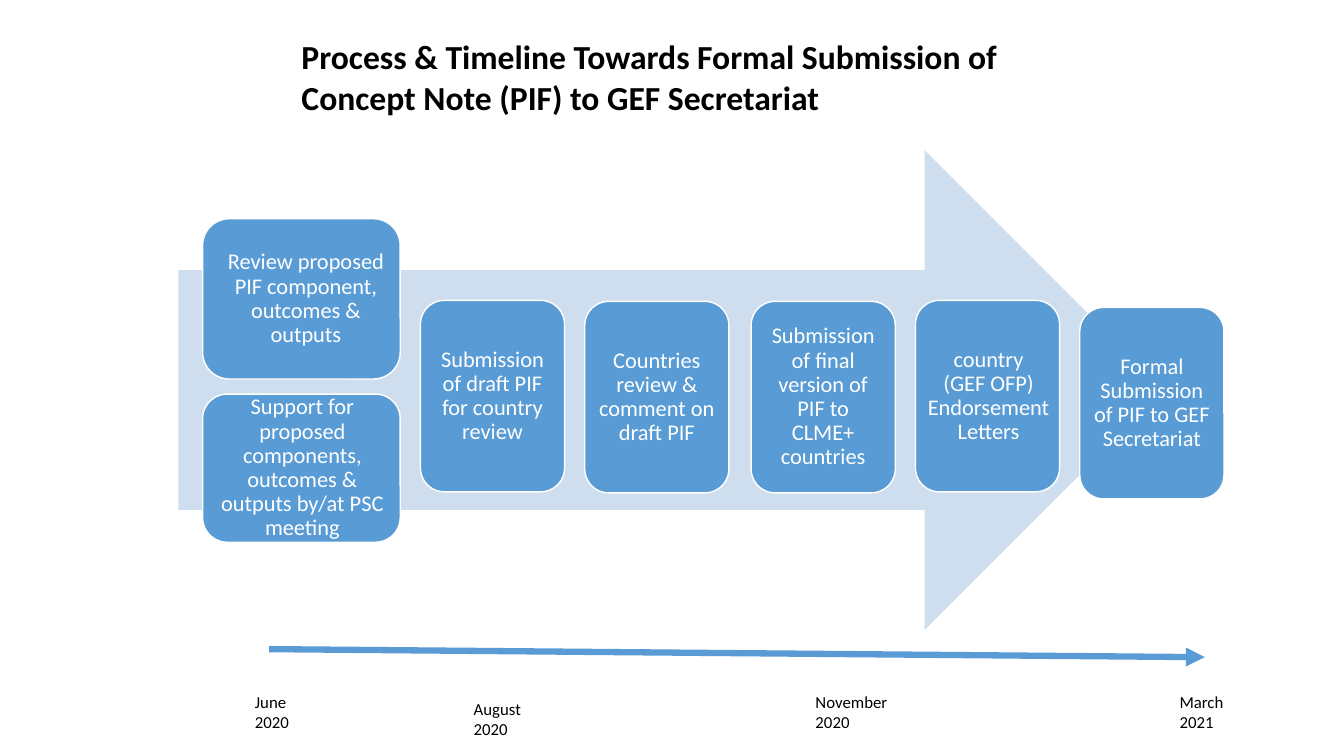
"""Build the slide on the process and timeline towards submitting the concept note."""
from lxml import etree
from pptx import Presentation
from pptx import util as u
from pptx.dml.color import RGBColor
from pptx.enum import shapes, text
from pptx.oxml import ns

PX = 9144
FONT = "Calibri"
COLORS = {"arrow": "CFDEEF", "step": "599BD5", "timeline": "5B9BD5",
          "white": "FFFFFF", "black": "000000"}

TITLE = "Process & Timeline Towards Formal Submission of Concept Note (PIF) to GEF Secretariat"
TITLE_BOX = (289, 31, 818, 91)
ARROW_BOX = (177, 149, 978, 476)
TIMELINE = (267, 644, 1195, 652)
STEP_SIZE = (143, 190)
EVEN = (7, 7)

REVIEWS = [
    ("Review proposed PIF component, outcomes & outputs", (201, 217, 196, 159), (14, 5)),
    ("Support for proposed components, outcomes & outputs by/at PSC meeting",
     (201, 391, 196, 147), (2, 0)),
]
STEPS = [
    ("Submission of draft PIF for country review", (417, 298), EVEN),
    ("Countries review & comment on draft PIF", (580, 299), EVEN),
    ("Submission of final version of PIF to CLME+ countries", (745, 299), EVEN),
    ("country\n(GEF OFP) Endorsement Letters", (908, 298), (2, 0)),
    ("Formal Submission of PIF to GEF Secretariat", (1071, 305), EVEN),
]
DATES = [
    ("June\n2020", (243, 681, 91, 50)),
    ("August 2020", (460, 688, 80, 50)),
    ("November 2020", (799, 681, 103, 50)),
    ("March\n2021", (1160, 681, 88, 50)),
]


def emu(lengths):
    return [u.Emu(length * PX) for length in lengths]


def color(name):
    return RGBColor.from_string(COLORS[name])


def write(shape, words, size, ink, margins, anchor, align, spacing=1.0, bold=False):
    frame = shape.text_frame
    frame.text = words
    left, right, vertical = emu(margins)
    frame_format = {"word_wrap": True, "auto_size": text.MSO_AUTO_SIZE.NONE,
                    "vertical_anchor": anchor, "margin_left": left, "margin_right": right,
                    "margin_top": vertical, "margin_bottom": vertical}
    for name, value in frame_format.items():
        setattr(frame, name, value)
    for paragraph in frame.paragraphs:
        paragraph.alignment = align
        paragraph.line_spacing = spacing
        for run in paragraph.runs:
            for name, value in {"name": FONT, "size": u.Pt(size), "bold": bold}.items():
                setattr(run.font, name, value)
            run.font.color.rgb = color(ink)


def add_block(slide, kind, box, fill):
    shape = slide.shapes.add_shape(kind, *emu(box))
    shape.shadow.inherit = False
    shape.fill.solid()
    shape.fill.fore_color.rgb = color(fill)
    shape.line.fill.background()
    return shape


def add_step(slide, words, box, margins):
    shape = add_block(slide, shapes.MSO_SHAPE.ROUNDED_RECTANGLE, box, "step")
    shape.line.color.rgb = color("white")
    shape.line.width = u.Pt(1)
    write(shape, words, 16, "white", (*margins, 0), text.MSO_ANCHOR.MIDDLE,
          text.PP_ALIGN.CENTER, 0.9)


def add_timeline(slide):
    line = slide.shapes.add_connector(shapes.MSO_CONNECTOR.STRAIGHT, *emu(TIMELINE))
    line.line.color.rgb = color("timeline")
    line.line.width = u.Pt(4.5)
    etree.SubElement(line.line._get_or_add_ln(), ns.qn("a:tailEnd"), type="triangle")
    etree.SubElement(line._element.spPr, ns.qn("a:effectLst"))


def main():
    presentation = Presentation()
    presentation.slide_width, presentation.slide_height = emu((1333, 750))
    slide = presentation.slides.add_slide(presentation.slide_layouts[5])
    top_left = (text.MSO_ANCHOR.TOP, text.PP_ALIGN.LEFT)

    title = slide.shapes.title
    for name, value in zip(("left", "top", "width", "height"), emu(TITLE_BOX)):
        setattr(title, name, value)
    write(title, TITLE, 24, "black", (10, 10, 5), *top_left, bold=True)

    add_block(slide, shapes.MSO_SHAPE.RIGHT_ARROW, ARROW_BOX, "arrow")
    for words, box, margins in REVIEWS:
        add_step(slide, words, box, margins)
    for words, corner, margins in STEPS:
        add_step(slide, words, corner + STEP_SIZE, margins)

    add_timeline(slide)
    for words, box in DATES:
        label = slide.shapes.add_textbox(*emu(box))
        write(label, words, 12, "black", (10, 10, 5), *top_left)

    presentation.save("out.pptx")


if __name__ == "__main__":
    main()
